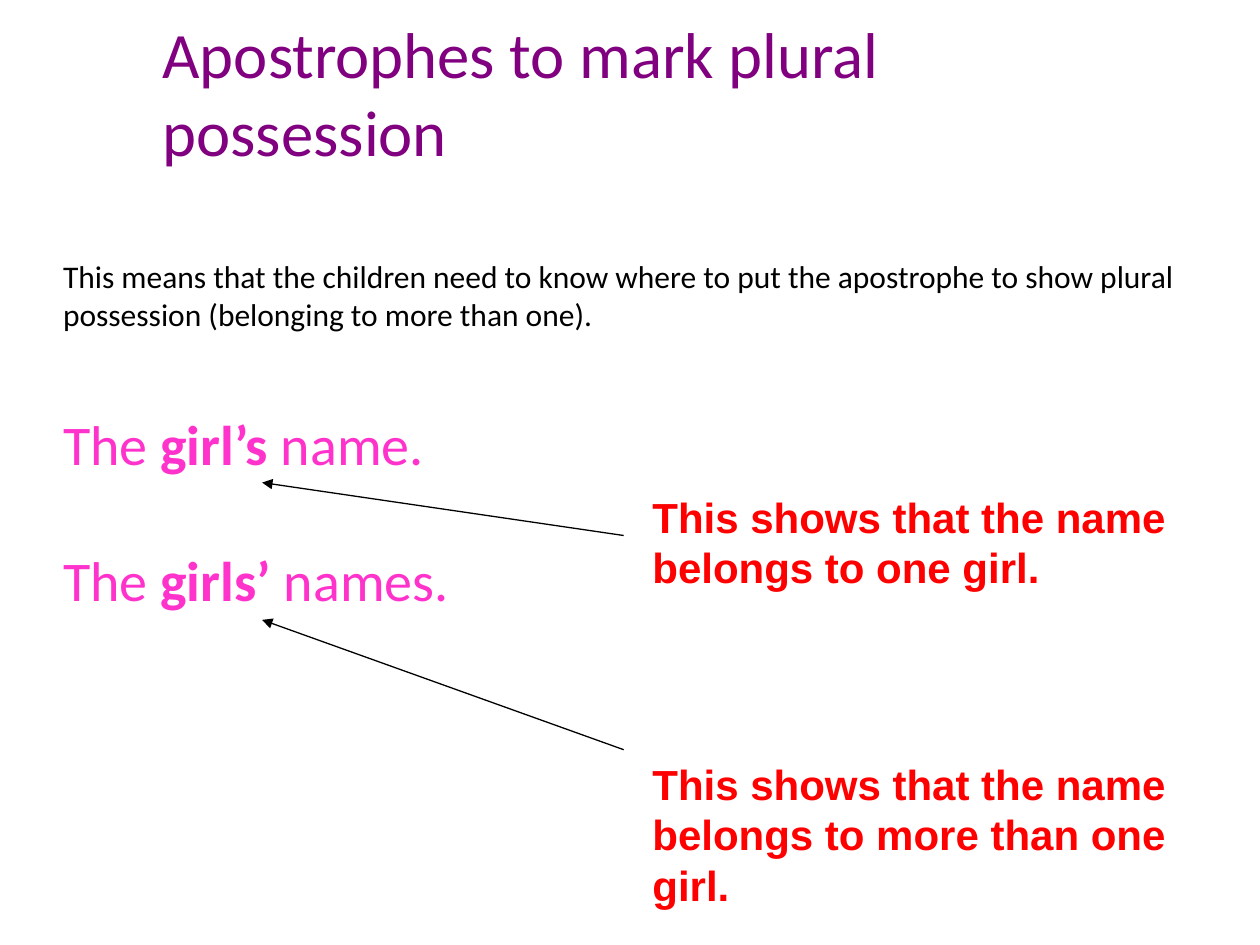
"""Build a slide on apostrophes that mark plural possession."""
from lxml import etree
from pptx import Presentation, util as u
from pptx.dml.color import RGBColor
from pptx.enum import shapes, text
from pptx.oxml.ns import qn

COLOURS = {"title": "800080", "body": "000000", "example": "FF33CC",
           "note": "FF0000", "arrow": "000000"}
FORMATS = {
    "title": {"name": "Calibri", "size": u.Pt(37), "bold": False},
    "body": {"name": "Calibri", "size": u.Pt(18), "bold": False},
    "example": {"name": "Calibri", "size": u.Pt(32), "bold": False},
    "note": {"name": "Arial", "size": u.Pt(24), "bold": True},
}


def add_span(para, words, style, **changes):
    span = para.add_run()
    span.text = words
    for name, value in {**FORMATS[style], **changes}.items():
        setattr(span.font, name, value)
    span.font.color.rgb = RGBColor.from_string(COLOURS[style])


def place(box, left, top, width, height, **frame_values):
    box.left, box.top = u.Inches(left), u.Inches(top)
    box.width, box.height = u.Inches(width), u.Inches(height)
    values = {"word_wrap": True, "auto_size": text.MSO_AUTO_SIZE.NONE, **frame_values}
    for name, value in values.items():
        setattr(box.text_frame, name, value)


deck = Presentation()
deck.slide_width, deck.slide_height = u.Inches(10), u.Inches(7.5)
page = deck.slides.add_slide(deck.slide_layouts[1])

title = page.shapes.title
place(title, 1.19, 0.05, 7.62, 1.35, vertical_anchor=text.MSO_ANCHOR.MIDDLE)
title_para = title.text_frame.paragraphs[0]
title_para.alignment = text.PP_ALIGN.LEFT
add_span(title_para, "Apostrophes to mark plural possession", "title")

body = page.placeholders[1]
place(body, 0.5, 2.04, 9, 4.5, vertical_anchor=text.MSO_ANCHOR.TOP,
      margin_left=0, margin_top=0, margin_right=0, margin_bottom=0)
body_lines = [
    (0, "body", ["This means that the children need to know where to put the "
                 "apostrophe to show plural possession (belonging to more than one)."]),
    (44, "example", ["The ", "girl’s", " name."]),
    (39, "example", ["The ", "girls’", " names."]),
]
for index, (gap, style, pieces) in enumerate(body_lines):
    para = body.text_frame.add_paragraph() if index else body.text_frame.paragraphs[0]
    properties = para._p.get_or_add_pPr()
    properties.set("marL", "0")
    properties.set("indent", "0")
    etree.SubElement(properties, qn("a:buNone"))
    para.space_before = u.Pt(gap)
    for position, words in enumerate(pieces):
        add_span(para, words, style, bold=position == 1)

notes = [
    ("This shows that the name belongs to one girl.", 3.83, 0.9, 4.25, 3.83),
    ("This shows that the name belongs to more than one girl.", 5.95, 1.3, 5.95, 4.92),
]
for words, top, height, arrow_start, arrow_end in notes:
    arrow = page.shapes.add_connector(
        shapes.MSO_CONNECTOR.STRAIGHT, u.Inches(4.95), u.Inches(arrow_start),
        u.Inches(2.08), u.Inches(arrow_end))
    arrow.line.color.rgb = RGBColor.from_string(COLOURS["arrow"])
    arrow.line.width = u.Pt(0.75)
    etree.SubElement(arrow.line._get_or_add_ln(), qn("a:tailEnd"), type="triangle")
    etree.SubElement(arrow._element.spPr, qn("a:effectLst"))

    note = page.shapes.add_textbox(0, 0, 0, 0)
    place(note, 5.08, top, 4.57, height,
          margin_top=u.Inches(0.07), margin_bottom=u.Inches(0.03))
    note_para = note.text_frame.paragraphs[0]
    note_para.line_spacing = u.Pt(28.8)
    add_span(note_para, words, "note")

deck.save("out.pptx")
